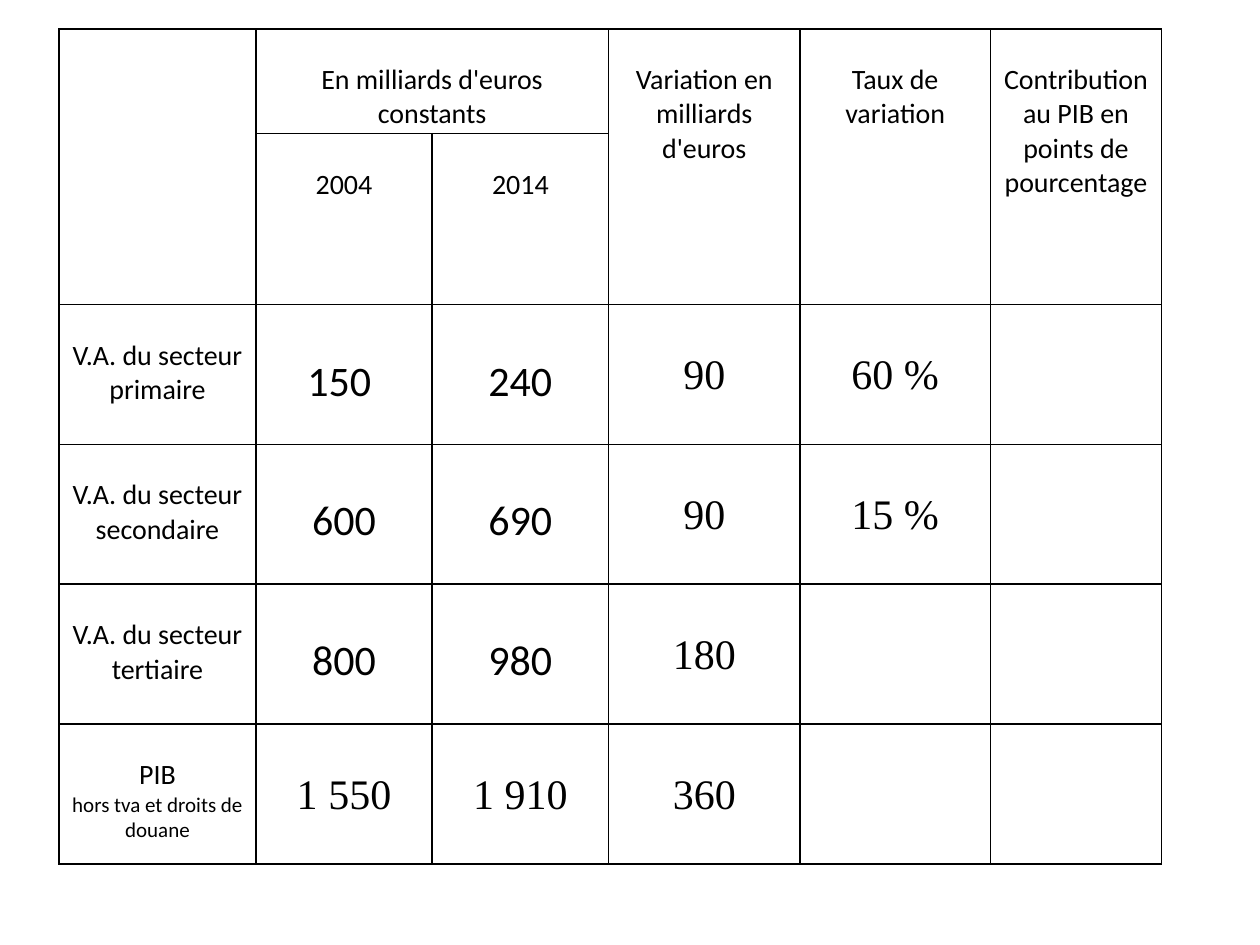
from lxml.etree import SubElement
from pptx import Presentation
from pptx.dml.color import RGBColor
from pptx.enum.text import PP_ALIGN
from pptx.oxml.ns import qn
from pptx.util import Inches, Pt

BLACK = RGBColor(0, 0, 0)
LABEL = ("Calibri", 16)
FIGURE = ("Calibri", 24)
ANSWER = ("Times New Roman", 24)
NOTE_SIZE = 12

# Each text starts one line of its own font below the top of its cell
LINE_HEIGHT = {LABEL: 0.27, FIGURE: 0.41, ANSWER: 0.38}

# Content
HEADER_ROWS = [
    ["", "En milliards d'euros constants", "", "Variation en milliards d'euros",
     "Taux de variation", "Contribution au PIB en points de pourcentage"],
    ["", "2004", "2014", "", "", ""],
]
SECTOR_ROWS = [
    ["V.A. du secteur primaire", "150 ", "240", "90", "60 %", ""],
    ["V.A. du secteur secondaire", "600", "690", "90", "15 %", ""],
    ["V.A. du secteur tertiaire", "800", "980", "180", "", ""],
]
TOTAL_ROW = ["PIB\nhors tva et droits de douane", "1 550", "1 910", "360", "", ""]
ROWS = HEADER_ROWS + SECTOR_ROWS + [TOTAL_ROW]

# Layout: first cell and last cell of each merged block
MERGES = [((0, 0), (1, 0)), ((0, 1), (0, 2))] + [((0, c), (1, c)) for c in (3, 4, 5)]
COLUMN_WIDTHS = [1.56, 1.4, 1.4, 1.52, 1.51, 1.36]
ROW_HEIGHTS = [0.83] * 2 + [1.11] * 4


def text_style(row, column):
    if row < len(HEADER_ROWS) or column == 0:
        return LABEL
    if column >= 3 or row == len(ROWS) - 1:
        return ANSWER
    return FIGURE


def add_borders(cell):
    properties = cell._tc.get_or_add_tcPr()
    for side in ("a:lnL", "a:lnR", "a:lnT", "a:lnB"):
        line = SubElement(properties, qn(side), w=str(Pt(1)))
        fill = SubElement(line, qn("a:solidFill"))
        SubElement(fill, qn("a:srgbClr"), val=str(BLACK))


def write_text(cell, text, style):
    name, size = style
    cell.margin_left = cell.margin_right = Inches(0.07)
    cell.margin_top = Inches(LINE_HEIGHT[style])
    cell.margin_bottom = 0
    cell.text = text
    for index, para in enumerate(cell.text_frame.paragraphs):
        para.alignment = PP_ALIGN.CENTER
        para.font.name = name
        para.font.size = Pt(NOTE_SIZE if index else size)
        para.font.color.rgb = BLACK


deck = Presentation()
deck.slide_width, deck.slide_height = Inches(10), Inches(7.5)
page = deck.slides.add_slide(deck.slide_layouts[6])

# Table grid
frame = page.shapes.add_table(
    len(ROWS), len(COLUMN_WIDTHS), Inches(0.47), Inches(0.23),
    Inches(sum(COLUMN_WIDTHS)), Inches(sum(ROW_HEIGHTS)))
table = frame.table
table.first_row = table.horz_banding = False
for column, width in zip(table.columns, COLUMN_WIDTHS):
    column.width = Inches(width)
for row, height in zip(table.rows, ROW_HEIGHTS):
    row.height = Inches(height)
for first, last in MERGES:
    table.cell(*first).merge(table.cell(*last))

# Cells
for row_index, texts in enumerate(ROWS):
    for column_index, text in enumerate(texts):
        cell = table.cell(row_index, column_index)
        add_borders(cell)
        cell.fill.background()
        if text:
            write_text(cell, text, text_style(row_index, column_index))

deck.save("out.pptx")
